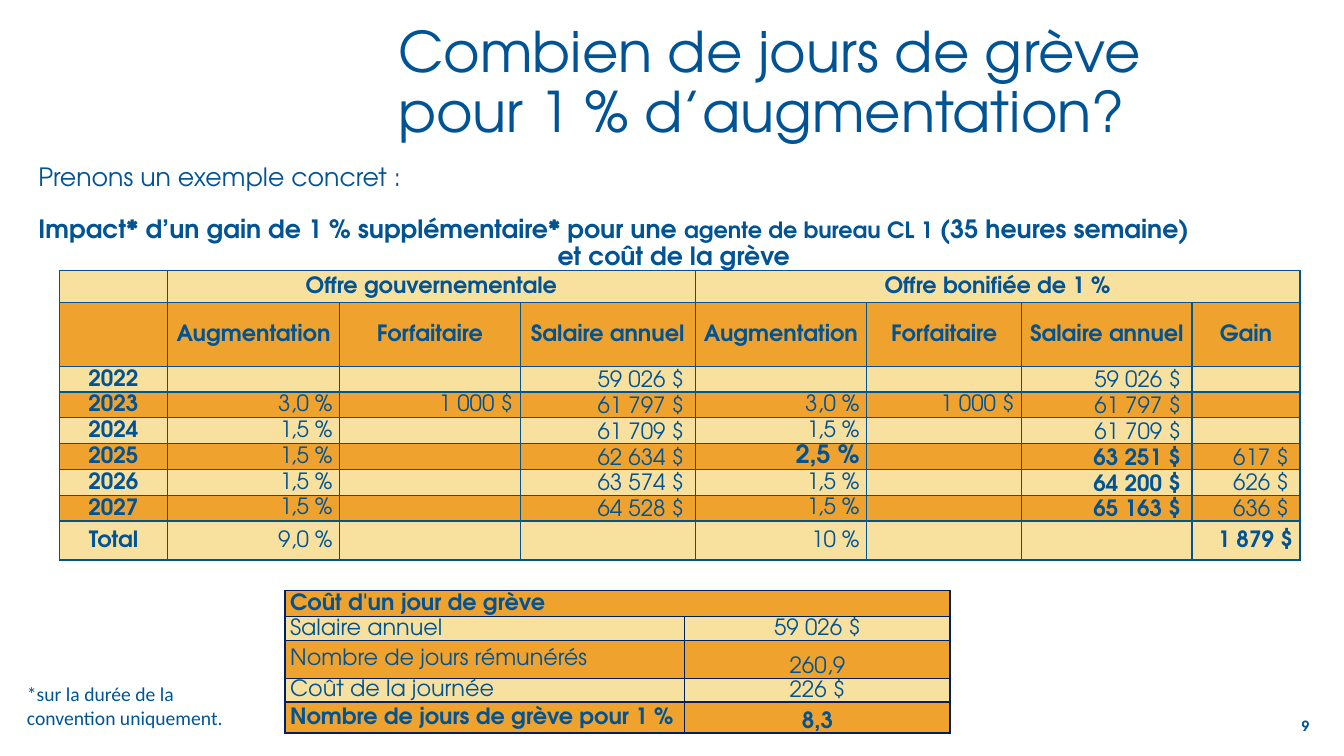
from lxml.etree import SubElement
from pptx import Presentation
from pptx.dml.color import RGBColor
from pptx.enum.text import MSO_ANCHOR, MSO_AUTO_SIZE, PP_ALIGN
from pptx.oxml.ns import qn
from pptx.util import Cm, Pt

FONT = "TeX Gyre Adventor"
BLUE, NAVY, ORANGE, CREAM = "005395", "002060", "F0A22E", "F8E09F"

SALARY_ROWS = [
    ["", "Offre gouvernementale", "", "", "Offre bonifiée de 1 %", "", "", ""],
    ["", "Augmentation", "Forfaitaire", "Salaire annuel",
     "Augmentation", "Forfaitaire", "Salaire annuel", "Gain"],
    ["2022", "", "", "59 026 $", "", "", "59 026 $", ""],
    ["2023", "3,0 %", "1 000 $", "61 797 $", "3,0 %", "1 000 $", "61 797 $", ""],
    ["2024", "1,5 %", "", "61 709 $", "1,5 %", "", "61 709 $", ""],
    ["2025", "1,5 %", "", "62 634 $", "2,5 %", "", "63 251 $", "617 $"],
    ["2026", "1,5 %", "", "63 574 $", "1,5 %", "", "64 200 $", "626 $"],
    ["2027", "1,5 %", "", "64 528 $", "1,5 %", "", "65 163 $", "636 $"],
    ["Total", "9,0 %", "", "", "10 %", "", "", "1 879 $"],
]
BOLD_AMOUNTS = {"2,5 %", "63 251 $", "64 200 $", "65 163 $", "1 879 $"}

COST_ROWS = [
    ["Coût d'un jour de grève", ""],
    ["Salaire annuel", "59 026 $"],
    ["Nombre de jours rémunérés", "260,9"],
    ["Coût de la journée", "226 $"],
    ["Nombre de jours de grève pour 1 %", "8,3"],
]


def color(value):
    """Turn a hex string into a colour."""
    return RGBColor.from_string(value)


def place(box, left, top, width, height):
    """Position a shape, in centimetres."""
    box.left, box.top = Cm(left), Cm(top)
    box.width, box.height = Cm(width), Cm(height)


def style(para, size, bold=False, align=PP_ALIGN.LEFT, name=FONT):
    """Format a whole paragraph."""
    para.alignment = align
    para.font.name = name
    para.font.size = Pt(size)
    para.font.bold = bold
    para.font.color.rgb = color(BLUE)


def add_title(page, text):
    """Fill the title placeholder."""
    box = page.shapes.title
    place(box, 9.78, 0.48, 22.48, 2.57)
    frame = box.text_frame
    frame.text = text
    frame.auto_size = MSO_AUTO_SIZE.NONE
    frame.vertical_anchor = MSO_ANCHOR.TOP
    para = frame.paragraphs[0]
    para.line_spacing = 0.9
    style(para, 40)


def add_intro(page):
    """Fill the body placeholder with the lead-in and the table heading."""
    box = page.placeholders[1]
    place(box, 0.71, 3.94, 32.54, 12.09)
    frame = box.text_frame
    frame.text = "\n".join([
        "Prenons un exemple concret :",
        "Impact* d’un gain de 1 % supplémentaire* pour une ",
        "et coût de la grève",
    ])
    frame.auto_size = MSO_AUTO_SIZE.NONE
    frame.vertical_anchor = MSO_ANCHOR.TOP
    lead, heading, ending = frame.paragraphs
    job = heading.add_run()
    job.text = "agente de bureau CL 1 "
    job.font.size = Pt(16)
    heading.add_run().text = "(35 heures semaine)"
    for para in frame.paragraphs:
        properties = para._p.get_or_add_pPr()
        properties.set("marL", "0")
        properties.set("indent", "0")
        SubElement(properties, qn("a:buNone"))
        para.space_before = para.space_after = Pt(0)
    lead.space_after = Pt(8)
    heading.space_before = Pt(10)
    heading.line_spacing = ending.line_spacing = 0.9
    style(lead, 18, align=PP_ALIGN.JUSTIFY)
    style(heading, 18, True)
    style(ending, 18, True, PP_ALIGN.CENTER)


def add_text(page, text, area, size, bold=False, align=PP_ALIGN.LEFT, name=FONT):
    """Add a wrapped text box."""
    box = page.shapes.add_textbox(*map(Cm, area))
    frame = box.text_frame
    frame.word_wrap = True
    frame.text = text
    style(frame.paragraphs[0], size, bold, align, name)


def add_grid(page, left, top, widths, heights):
    """Add a plain table with the given column widths and row heights."""
    frame = page.shapes.add_table(len(heights), len(widths), Cm(left), Cm(top),
                                  Cm(sum(widths)), Cm(sum(heights)))
    table = frame.table
    table.first_row = table.horz_banding = False
    for column, width in zip(table.columns, widths):
        column.width = Cm(width)
    for row, height in zip(table.rows, heights):
        row.height = Cm(height)
    return table


def paint_cell(cell, fill, border):
    """Give a cell its borders and its fill."""
    properties = cell._tc.get_or_add_tcPr()
    for side in ("lnL", "lnR", "lnT", "lnB"):
        line = SubElement(properties, qn(f"a:{side}"), w=str(Pt(1)))
        SubElement(SubElement(line, qn("a:solidFill")), qn("a:srgbClr"), val=border)
    cell.fill.solid()
    cell.fill.fore_color.rgb = color(fill)


def write_cell(cell, text, align, anchor, bold, size=16, left=0.13, right=0.13):
    """Write one formatted line in a cell."""
    cell.margin_left, cell.margin_right = Cm(left), Cm(right)
    cell.margin_top = cell.margin_bottom = 0
    cell.vertical_anchor = anchor
    para = cell.text_frame.paragraphs[0]
    if text:
        para.add_run().text = text
        para.line_spacing = Pt(16)
        style(para, size, bold, align)
    else:
        SubElement(para._p, qn("a:endParaRPr"), sz="1000")


def add_salary_table(page):
    """Compare both offers year by year."""
    widths = [2.72, 4.34, 4.55, 4.41, 4.32, 3.91, 4.29, 2.72]
    heights = [0.8, 1.61] + [0.65] * 6 + [0.98]
    table = add_grid(page, 1.5, 6.82, widths, heights)
    for row, texts in enumerate(SALARY_ROWS):
        for column, text in enumerate(texts):
            cell = table.cell(row, column)
            paint_cell(cell, ORANGE if row % 2 else CREAM, BLUE)
            heading = row < 2 or column == 0
            amount = not heading and column in (3, 6, 7) and texts[0] != "Total"
            write_cell(cell, text,
                       PP_ALIGN.CENTER if heading else PP_ALIGN.RIGHT,
                       MSO_ANCHOR.BOTTOM if amount else MSO_ANCHOR.MIDDLE,
                       heading or text in BOLD_AMOUNTS,
                       18 if text == "2,5 %" else 16,
                       0.13 if amount else 0.18, 0.28 if amount else 0.18)
    table.cell(0, 1).merge(table.cell(0, 3))
    table.cell(0, 4).merge(table.cell(0, 7))


def add_cost_table(page):
    """Show what one strike day costs."""
    table = add_grid(page, 7.18, 14.88, [10.08, 6.68], [0.65, 0.6, 0.96, 0.6, 0.78])
    last = len(COST_ROWS) - 1
    for row, (label, value) in enumerate(COST_ROWS):
        bold = row in (0, last)
        for column in range(2):
            paint_cell(table.cell(row, column), CREAM if row % 2 else ORANGE, NAVY)
        write_cell(table.cell(row, 0), label, PP_ALIGN.LEFT, MSO_ANCHOR.MIDDLE, bold)
        write_cell(table.cell(row, 1), value, PP_ALIGN.CENTER, MSO_ANCHOR.BOTTOM, bold)
    table.cell(0, 0).merge(table.cell(0, 1))


def main():
    """Build the slide and save it."""
    deck = Presentation()
    deck.slide_width, deck.slide_height = Cm(33.87), Cm(19.05)
    page = deck.slides.add_slide(deck.slide_layouts[1])
    add_title(page, "Combien de jours de grève pour 1 % d’augmentation?")
    add_intro(page)
    add_cost_table(page)
    add_salary_table(page)
    add_text(page, "9", (27.97, 17.96, 5.28, 1.02), 10, True, PP_ALIGN.RIGHT)
    add_text(page, "*sur la durée de la convention uniquement.",
             (0.43, 17.07, 6.45, 1.45), 14, name="Calibri")
    deck.save("out.pptx")


if __name__ == "__main__":
    main()
